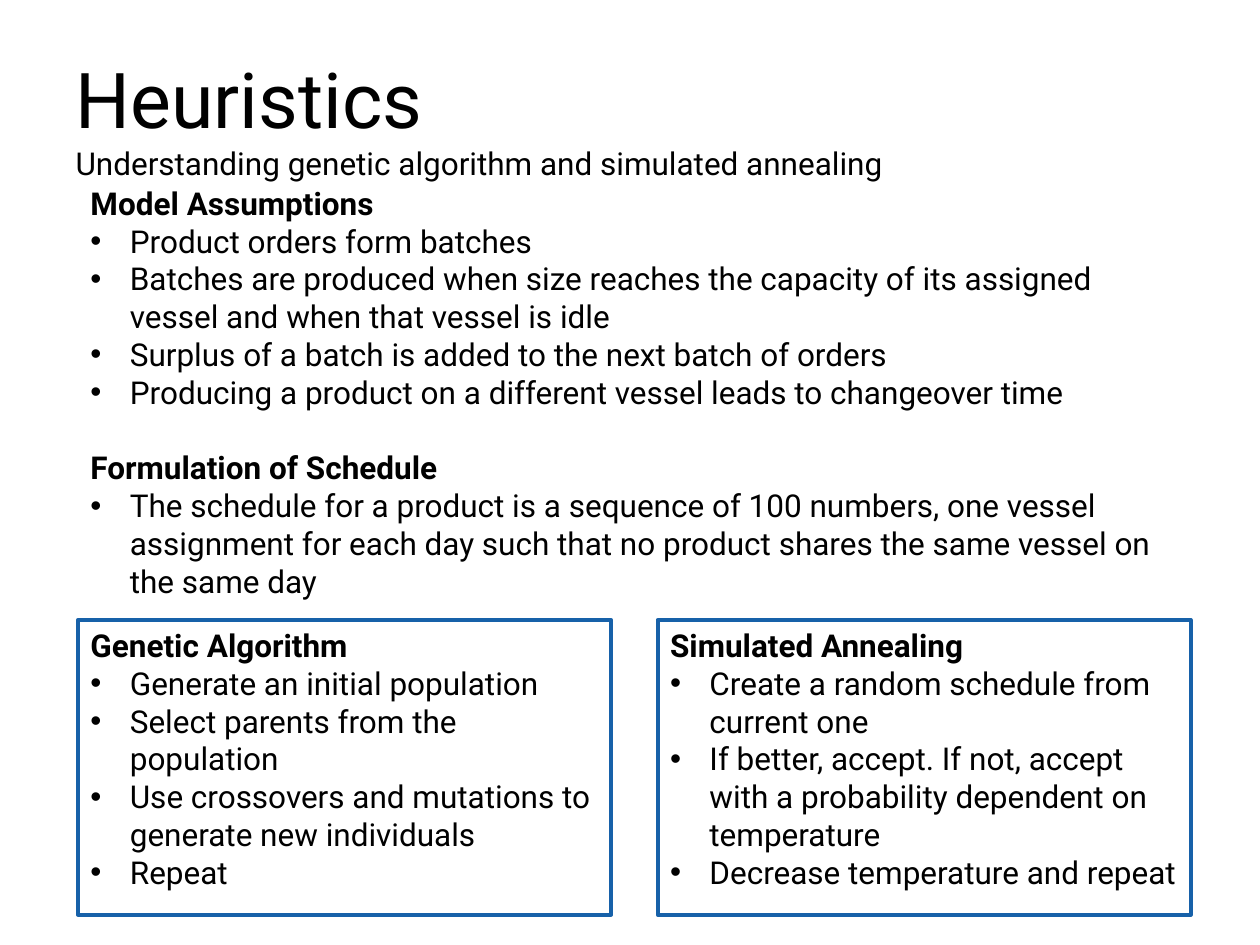
from lxml.etree import SubElement
from pptx import Presentation
from pptx.dml.color import RGBColor
from pptx.enum.shapes import MSO_SHAPE as Preset
from pptx.enum.text import MSO_ANCHOR as Anchor, MSO_AUTO_SIZE as AutoSize, PP_ALIGN as Align
from pptx.oxml.ns import qn
from pptx.util import Pt

BLACK = RGBColor(0x00, 0x00, 0x00)
BLUE = RGBColor(0x17, 0x61, 0xA9)
FONT = "Roboto"
BODY_SIZE = 18
INDENT = 22.5
LEFT = 44.64

ASSUMPTIONS = (
    "Model Assumptions",
    [
        "Product orders form batches",
        "Batches are produced when size reaches the capacity of its assigned "
        "vessel and when that vessel is idle",
        "Surplus of a batch is added to the next batch of orders",
        "Producing a product on a different vessel leads to changeover time",
    ],
)
FORMULATION = (
    "Formulation of Schedule",
    [
        "The schedule for a product is a sequence of 100 numbers, one vessel "
        "assignment for each day such that no product shares the same vessel on the same day",
    ],
)
METHODS = [
    (
        "Genetic Algorithm",
        [
            "Generate an initial population",
            "Select parents from the population",
            "Use crossovers and mutations to generate new individuals",
            "Repeat",
        ],
    ),
    (
        "Simulated Annealing",
        [
            "Create a random schedule from current one",
            "If better, accept. If not, accept with a probability dependent on temperature",
            "Decrease temperature and repeat",
        ],
    ),
]


def add_span(para, text, size=BODY_SIZE, bold=False):
    """Add one formatted run to a left-aligned paragraph."""
    para.alignment = Align.LEFT
    span = para.add_run()
    span.text = text
    span.font.name = FONT
    span.font.size = Pt(size)
    span.font.bold = bold
    span.font.color.rgb = BLACK


def add_bullet(para):
    """Give a paragraph a hanging bullet."""
    props = para._p.get_or_add_pPr()
    props.set("marL", str(Pt(INDENT)))
    props.set("indent", str(Pt(-INDENT)))
    SubElement(props, qn("a:buFont"), typeface="Arial")
    SubElement(props, qn("a:buChar"), char="•")


def fill_sections(frame, sections):
    """Write headed bullet lists, one line apart, into a text frame."""
    frame.word_wrap = True
    frame.vertical_anchor = Anchor.TOP
    for number, (heading, points) in enumerate(sections):
        para = frame.add_paragraph() if number else frame.paragraphs[0]
        if number:
            para.space_before = Pt(21.6)
        add_span(para, heading, bold=True)
        for point in points:
            para = frame.add_paragraph()
            add_span(para, point)
            add_bullet(para)


def set_title(page):
    """Place the title and its subtitle line in the title placeholder."""
    title = page.shapes.title
    title.left, title.top, title.width, title.height = Pt(36), Pt(21.6), Pt(648), Pt(90)
    frame = title.text_frame
    frame.auto_size = AutoSize.NONE
    frame.vertical_anchor = Anchor.MIDDLE
    add_span(frame.paragraphs[0], "Heuristics", size=44)
    add_span(frame.add_paragraph(), "Understanding genetic algorithm and simulated annealing")


def add_text(page, sections):
    """Add the unframed text above the method boxes."""
    box = page.shapes.add_textbox(Pt(LEFT), Pt(101.5), Pt(635.76), Pt(246.2))
    fill_sections(box.text_frame, sections)


def add_method(page, left, section):
    """Add an outlined box for one heuristic."""
    box = page.shapes.add_shape(Preset.RECTANGLE, Pt(left), Pt(354.24), Pt(304.56), Pt(168.48))
    box.shadow.inherit = False
    box.fill.background()
    box.line.color.rgb = BLUE
    box.line.width = Pt(2.25)
    fill_sections(box.text_frame, [section])


def main():
    """Build and save the slide."""
    deck = Presentation()
    deck.slide_width, deck.slide_height = Pt(720), Pt(540)
    page = deck.slides.add_slide(deck.slide_layouts[5])
    set_title(page)
    for column, method in enumerate(METHODS):
        add_method(page, LEFT + column * 331.2, method)
    add_text(page, [ASSUMPTIONS, FORMULATION])
    deck.save("out.pptx")


if __name__ == "__main__":
    main()
